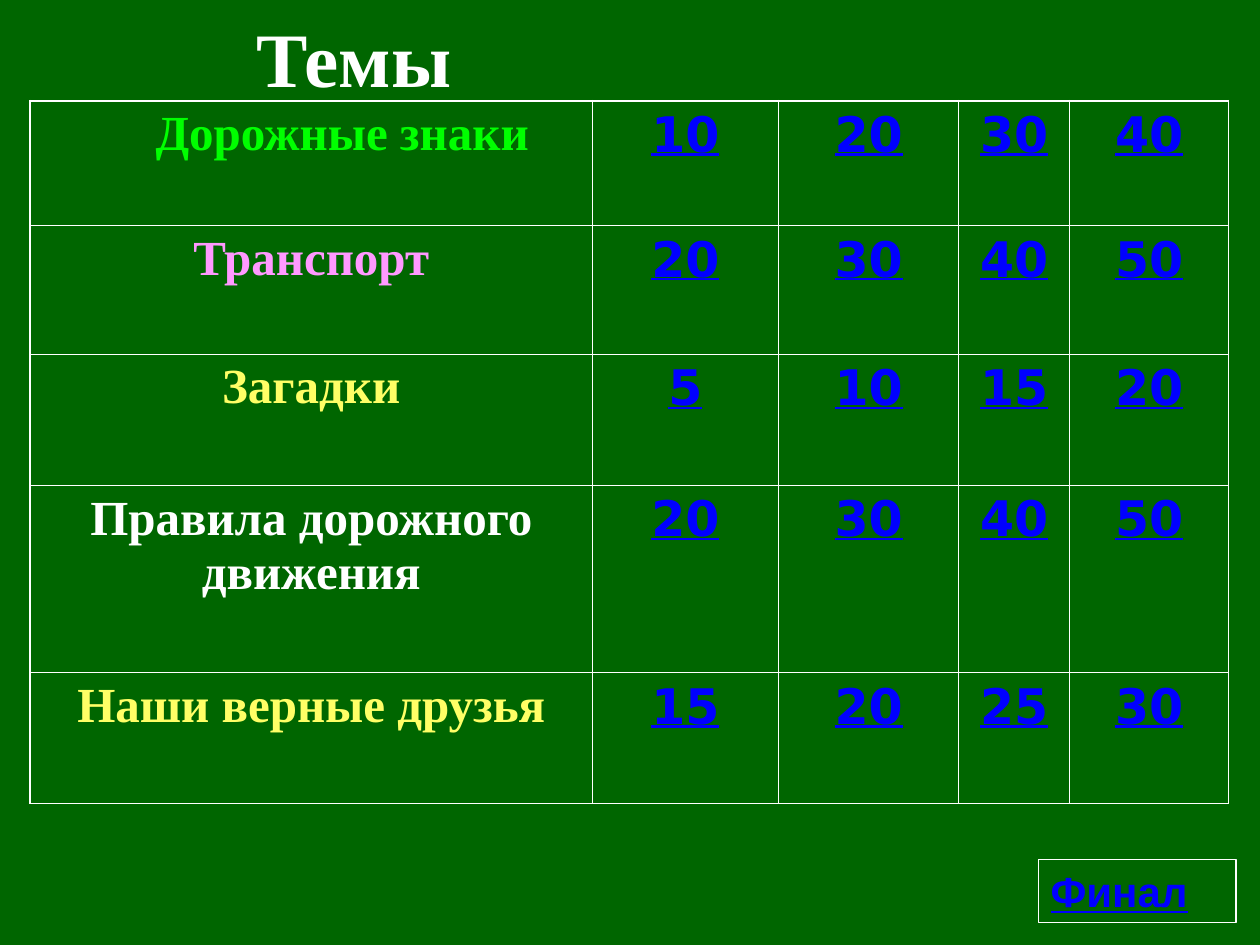
from lxml.etree import SubElement
from pptx import Presentation
from pptx.dml.color import RGBColor
from pptx.enum.text import MSO_ANCHOR, PP_ALIGN
from pptx.oxml.ns import qn
from pptx.util import Inches, Pt

GREEN = RGBColor(0x00, 0x66, 0x00)
WHITE = RGBColor(0xFF, 0xFF, 0xFF)
LIME = RGBColor(0x00, 0xFF, 0x00)
PINK = RGBColor(0xFF, 0x99, 0xFF)
YELLOW = RGBColor(0xFF, 0xFF, 0x66)
BLUE = RGBColor(0x00, 0x00, 0xFF)

TOPICS = [
    ("Дорожные знаки", LIME, (10, 20, 30, 40)),
    ("Транспорт", PINK, (20, 30, 40, 50)),
    ("Загадки", YELLOW, (5, 10, 15, 20)),
    ("Правила дорожного движения", WHITE, (20, 30, 40, 50)),
    ("Наши верные друзья", YELLOW, (15, 20, 25, 30)),
]
COLUMN_WIDTHS = (4.46, 1.48, 1.43, 0.88, 1.26)
ROW_HEIGHTS = (0.99, 1.02, 1.04, 1.49, 1.04)
FIRST_TOPIC_INDENT = 0.49
OUTER_LINE, INNER_LINE = 1.08, 0.45


def write(frame, text, font, size, color, align, before=0, underline=False):
    frame.text = text
    paragraph = frame.paragraphs[0]
    paragraph.alignment = align
    paragraph.space_before = Pt(before)
    span = paragraph.runs[0].font
    span.name, span.size, span.bold = font, Pt(size), True
    span.underline = underline
    span.color.rgb = color


def add_text(page, place, **style):
    box = page.shapes.add_textbox(*(Inches(length) for length in place))
    box.text_frame.word_wrap = True
    box.text_frame.vertical_anchor = MSO_ANCHOR.MIDDLE
    write(box.text_frame, **style)
    return box


def set_borders(cell, outer_sides):
    properties = cell._tc.get_or_add_tcPr()
    for position, (side, is_outer) in enumerate(outer_sides.items()):
        width = Pt(OUTER_LINE if is_outer else INNER_LINE)
        line = properties.makeelement(qn(f"a:{side}"), {"w": str(width)})
        fill = SubElement(line, qn("a:solidFill"))
        SubElement(fill, qn("a:srgbClr"), val=str(WHITE))
        properties.insert(position, line)


def add_topic_table(page):
    row_count, column_count = len(TOPICS), len(COLUMN_WIDTHS)
    table = page.shapes.add_table(
        row_count, column_count, Inches(0.24), Inches(0.8),
        Inches(sum(COLUMN_WIDTHS)), Inches(sum(ROW_HEIGHTS))).table
    table.first_row = table.horz_banding = False
    for column, width in zip(table.columns, COLUMN_WIDTHS):
        column.width = Inches(width)
    for row, height in zip(table.rows, ROW_HEIGHTS):
        row.height = Inches(height)
    for row, (topic, color, scores) in enumerate(TOPICS):
        for column, value in enumerate((topic, *scores)):
            cell = table.cell(row, column)
            is_score = column > 0
            write(cell.text_frame, str(value),
                  "DejaVu Sans" if is_score else "Times New Roman", 28,
                  BLUE if is_score else color, PP_ALIGN.CENTER, 7, is_score)
            cell.fill.background()
            set_borders(cell, {
                "lnL": column == 0, "lnR": column == column_count - 1,
                "lnT": row == 0, "lnB": False})
    table.cell(0, 0).margin_left = Inches(0.1 + FIRST_TOPIC_INDENT)


def main():
    deck = Presentation()
    deck.slide_width, deck.slide_height = Inches(10), Inches(7.5)
    page = deck.slides.add_slide(deck.slide_layouts[6])
    page.background.fill.solid()
    page.background.fill.fore_color.rgb = GREEN

    add_text(page, (0.41, 0, 4.95, 0.9), text="Темы ", font="Times New Roman",
             size=44, color=WHITE, align=PP_ALIGN.CENTER)
    add_topic_table(page)
    final = add_text(page, (8.24, 6.82, 1.57, 0.5), text="Финал", font="Arial",
                     size=24, color=BLUE, align=PP_ALIGN.LEFT, before=15,
                     underline=True)
    final.line.color.rgb = WHITE
    final.line.width = Pt(0.75)

    deck.save("out.pptx")


if __name__ == "__main__":
    main()
